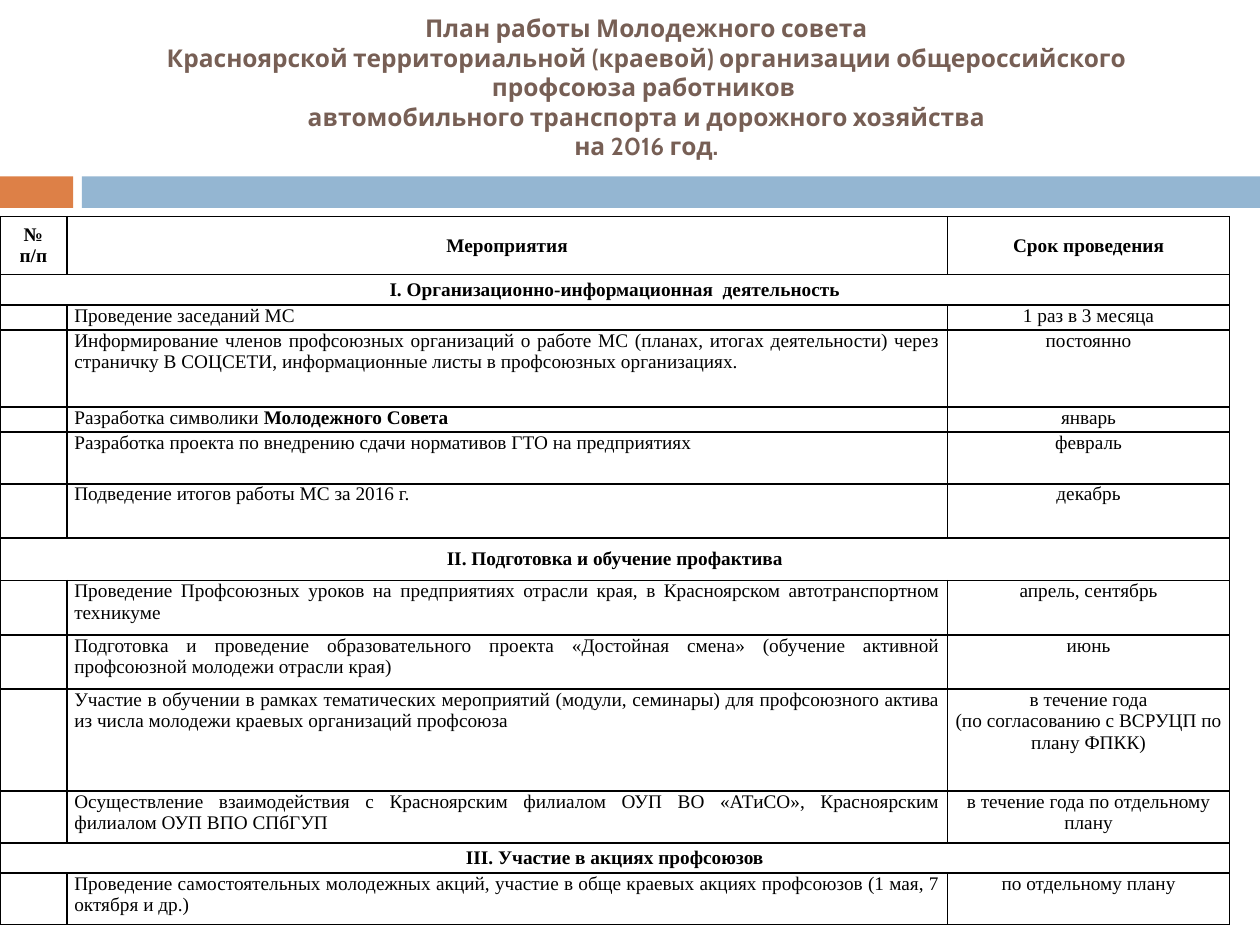
from lxml import etree
from pptx import Presentation
from pptx.dml.color import RGBColor
from pptx.enum import shapes, text
from pptx.oxml import ns
from pptx.util import Inches, Pt

HUES = {"orange": "DD8047", "blue": "94B6D2", "brown": "775F55",
        "black": "000000", "white": "FFFFFF"}
FACE = "Times New Roman"
SIZE = 11
MID = text.PP_ALIGN.CENTER
JUST = text.PP_ALIGN.JUSTIFY


def hue(name):
    return RGBColor.from_string(HUES[name])


def frame(cell):
    """Give a cell black one-point borders on all four sides."""
    props = cell._tc.get_or_add_tcPr()
    for side in ("lnL", "lnR", "lnT", "lnB"):
        line = etree.SubElement(props, ns.qn("a:" + side), w=str(Pt(1)))
        fill = etree.SubElement(line, ns.qn("a:solidFill"))
        etree.SubElement(fill, ns.qn("a:srgbClr"), val=HUES["black"])


prs = Presentation()
prs.slide_width, prs.slide_height = Inches(10), Inches(7.5)
slide = prs.slides.add_slide(prs.slide_layouts[5])

# Colour band under the title
for left, width, name in ((0, 0.58, "orange"), (0.65, 9.35, "blue")):
    bar = slide.shapes.add_shape(shapes.MSO_SHAPE.RECTANGLE, Inches(left),
                                 Inches(1.4), Inches(width), Inches(0.25))
    bar.shadow.inherit = False
    bar.fill.solid()
    bar.fill.fore_color.rgb = hue(name)
    bar.line.fill.background()

# Title
title = slide.shapes.title
title.left, title.top = Inches(0.67), Inches(0.25)
title.width, title.height = Inches(8.92), Inches(1.08)
body = title.text_frame
body.text = ("План работы Молодежного совета\v"
             "Красноярской территориальной (краевой) организации "
             "общероссийского профсоюза работников \v"
             "автомобильного транспорта и дорожного хозяйства\v"
             "на 2016 год.")
body.word_wrap = True
body.auto_size = text.MSO_AUTO_SIZE.NONE
body.vertical_anchor = text.MSO_ANCHOR.MIDDLE
body.margin_top, body.margin_bottom = Inches(0.05), Inches(0.25)
para = body.paragraphs[0]
para.alignment = MID
para.font.name, para.font.size, para.font.bold = "Cabin", Pt(14), True
para.font.color.rgb = hue("brown")

# Plan: row height, then a section heading or an event with its date
HEAD = ("№ п/п", "Мероприятия", "Срок проведения")
PLAN = [
    (0.24, "I. Организационно-информационная  деятельность"),
    (0.2, "Проведение заседаний МС ", "1 раз в 3 месяца"),
    (0.61, "Информирование членов профсоюзных организаций о работе МС "
     "(планах, итогах деятельности) через страничку В СОЦСЕТИ, "
     "информационные листы в профсоюзных организациях.", "постоянно"),
    (0.2, "Разработка символики |Молодежного Совета", "январь"),
    (0.41, "Разработка проекта по внедрению сдачи нормативов ГТО "
     "на предприятиях", "февраль"),
    (0.43, "Подведение итогов работы МС за 2016 г.", "декабрь"),
    (0.34, "II. Подготовка и обучение профактива"),
    (0.43, "Проведение Профсоюзных уроков на предприятиях отрасли края, "
     "в Красноярском автотранспортном техникуме", "апрель, сентябрь"),
    (0.43, "Подготовка и проведение образовательного проекта «Достойная "
     "смена» (обучение активной профсоюзной молодежи отрасли края)", "июнь"),
    (0.81, "Участие в обучении в рамках тематических мероприятий (модули, "
     "семинары) для профсоюзного актива из числа молодежи краевых "
     "организаций профсоюза",
     "в течение года\n(по согласованию с ВСРУЦП по плану ФПКК)"),
    (0.41, "Осуществление взаимодействия с Красноярским филиалом ОУП ВО "
     "«АТиСО», Красноярским филиалом ОУП ВПО СПбГУП",
     "в течение года по отдельному плану"),
    (0.24, "III. Участие в акциях профсоюзов"),
    (0.41, "Проведение самостоятельных молодежных акций, участие в обще "
     "краевых акциях профсоюзов (1 мая, 7 октября и др.)",
     "по отдельному плану"),
]
rows = [(0.46, HEAD, True)]
for high, *words in PLAN:
    section = len(words) == 1
    rows.append((high, (words[0], "", "") if section else ("", *words),
                 section))

shape = slide.shapes.add_table(len(rows), 3, Inches(0), Inches(1.72),
                               Inches(9.76), Inches(5.62))
table = shape.table
table.first_row = table.horz_banding = False
for col, width in zip(table.columns, (0.53, 6.99, 2.24)):
    col.width = Inches(width)

for r, (high, words, strong) in enumerate(rows):
    table.rows[r].height = Inches(high)
    if strong and r:
        table.cell(r, 0).merge(table.cell(r, 2))
    for c, label in enumerate(words):
        cell = table.cell(r, c)
        frame(cell)
        cell.fill.solid()
        cell.fill.fore_color.rgb = hue("white")
        cell.margin_left = cell.margin_right = Inches(0.06)
        cell.margin_top = cell.margin_bottom = 0
        if strong:
            cell.vertical_anchor = text.MSO_ANCHOR.MIDDLE
        plain, _, bold = label.partition("|")
        cell.text = plain
        if bold:
            run = cell.text_frame.paragraphs[0].add_run()
            run.text, run.font.bold = bold, True
        for para in cell.text_frame.paragraphs:
            para.alignment = JUST if c == 1 and not strong else MID
            para.font.name, para.font.size = FACE, Pt(SIZE)
            para.font.bold = strong
            para.font.color.rgb = hue("black")
            if not label:  # keeps an empty cell from stretching its row
                etree.SubElement(para._p, ns.qn("a:endParaRPr"),
                                 sz=str(SIZE * 100))

prs.save("out.pptx")
